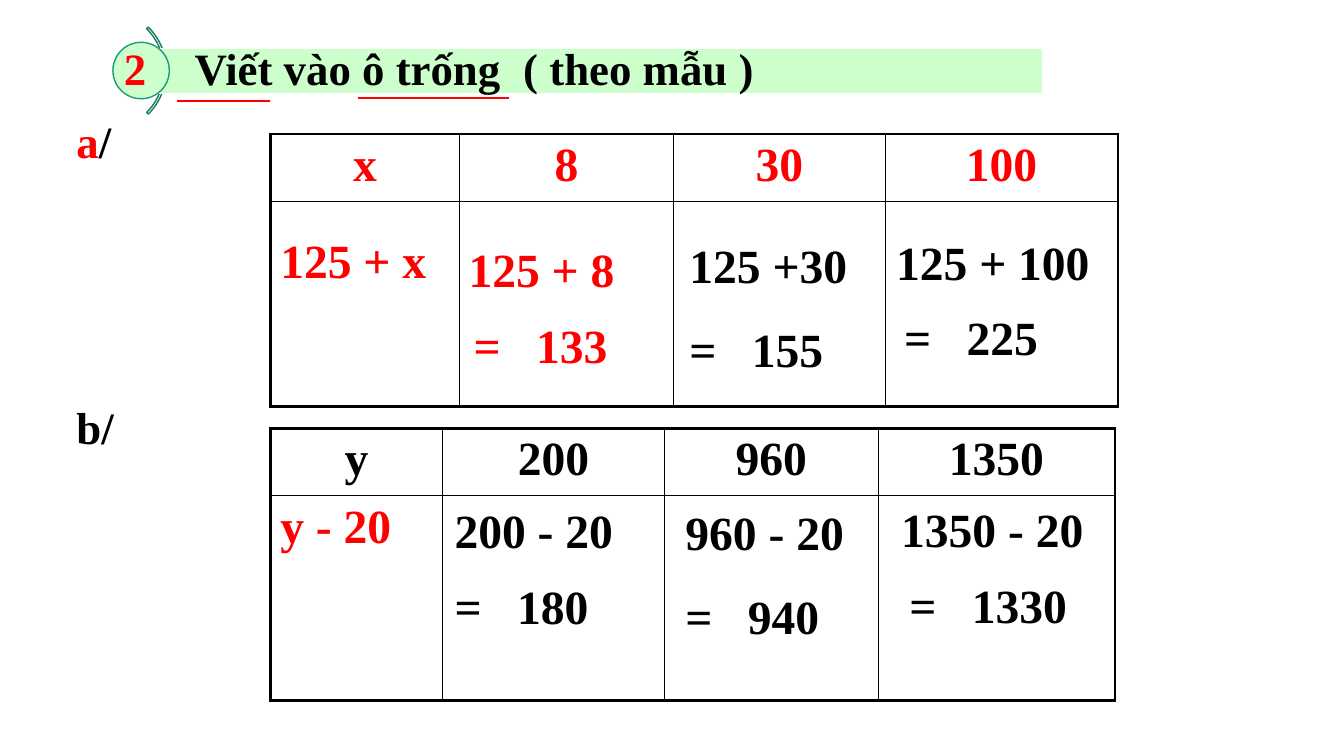
from lxml import etree
from pptx import Presentation
from pptx.dml.color import RGBColor
from pptx.enum.shapes import MSO_CONNECTOR, MSO_SHAPE
from pptx.enum.text import MSO_ANCHOR, PP_ALIGN
from pptx.oxml.ns import qn
from pptx.util import Inches, Pt

LEFT, CENTER = PP_ALIGN.LEFT, PP_ALIGN.CENTER
TOP, MIDDLE = MSO_ANCHOR.TOP, MSO_ANCHOR.MIDDLE
STRAIGHT = MSO_CONNECTOR.STRAIGHT
ARC, BAR, CIRCLE = MSO_SHAPE.BLOCK_ARC, MSO_SHAPE.RECTANGLE, MSO_SHAPE.OVAL

THEME = {
    "font": "Times New Roman",
    "black": "000000",
    "red": "FF0000",
    "white": "FFFFFF",
    "mint": "CCFFCC",
    "arc": "177B60",
    "ring": "1D9A78",
    "heading": 32,
    "number": 34,
    "thin": 1,
    "underline": 1.5,
    "thick": 2.25,
}

presentation = Presentation()
presentation.slide_width = Inches(13.33)
presentation.slide_height = Inches(7.5)
slide = presentation.slides.add_slide(presentation.slide_layouts[6])

# The grid has 133.3 columns and 75 rows
COLUMN = presentation.slide_width / 133.3
ROW = presentation.slide_height / 75


def place(left, top, width, height):
    return [int(left * COLUMN), int(top * ROW), int(width * COLUMN), int(height * ROW)]


def write(text_frame, parts, size, align=LEFT, tab=None):
    """Fill one paragraph with (text, colour) parts and an optional tab stop."""
    paragraph = text_frame.paragraphs[0]
    paragraph.alignment = align
    if tab:
        tab_list = etree.SubElement(paragraph._p.get_or_add_pPr(), qn("a:tabLst"))
        etree.SubElement(tab_list, qn("a:tab"), pos=str(int(tab * COLUMN)), algn="l")
    for text, colour in parts:
        run = paragraph.add_run()
        run.text = text
        run.font.name = THEME["font"]
        run.font.size = Pt(THEME[size])
        run.font.bold = True
        run.font.color.rgb = RGBColor.from_string(THEME[colour])


# Heading: arc behind the bar, then the bar and the circle
heading_shapes = {}
for kind, area, fill, line in [
    (ARC, (4.3, 0.9, 12.2, 12.2), None, "arc"),
    (BAR, (15.7, 4.8, 87.7, 4.5), "mint", "white"),
    (CIRCLE, (11.2, 4.2, 5.6, 5.6), "mint", "ring"),
]:
    shape = slide.shapes.add_shape(kind, *place(*area))
    shape.shadow.inherit = False
    if fill:
        shape.fill.solid()
        shape.fill.fore_color.rgb = RGBColor.from_string(THEME[fill])
    else:
        shape.fill.background()
    shape.line.color.rgb = RGBColor.from_string(THEME[line])
    shape.line.width = Pt(THEME["thin"])
    heading_shapes[kind] = shape

arc = heading_shapes[ARC]
for index, value in enumerate((189, 27, 0.019)):
    arc.adjustments[index] = value

title_frame = heading_shapes[BAR].text_frame
title_frame.margin_left = int(3.6 * COLUMN)
title_frame.vertical_anchor = MIDDLE
title_frame.word_wrap = True
write(title_frame, [("Viết vào ô trống\t( theo mẫu )", "black")], "heading", tab=32.6)
title_frame.paragraphs[0].line_spacing = 0.9

# Red underlines below the heading
for start, end, height in [(17.6, 26.8, 10), (35.5, 50.5, 9.7)]:
    underline = slide.shapes.add_connector(
        STRAIGHT, int(start * COLUMN), int(height * ROW), int(end * COLUMN), int(height * ROW))
    underline.line.color.rgb = RGBColor.from_string(THEME["red"])
    underline.line.width = Pt(THEME["underline"])
    etree.SubElement(underline._element.spPr, qn("a:effectLst"))

# Exercise number and part labels
for area, parts in [
    ((11.3, 3.6, 4.2, 6.4), [("2", "red")]),
    ((6.6, 10.8, 6.6, 6.4), [("a", "red"), ("/", "black")]),
    ((6.6, 39.2, 6.8, 6.4), [("b/", "black")]),
]:
    label = slide.shapes.add_textbox(*place(*area))
    label.text_frame.word_wrap = False
    write(label.text_frame, parts, "heading")

# Tables: header row, then the expression and room for the answers
ROW_HEIGHTS = (6.7, 20.3)
TABLES = [
    {"top": 13.3, "columns": (18.8, 21.2, 21, 23.1), "header": ("x", "8", "30", "100"),
     "header_colour": "red", "expression": "125 + x", "expression_margin": 3.4},
    {"top": 42.5, "columns": (17.1, 22, 21.2, 23.5), "header": ("y", "200", "960", "1350"),
     "header_colour": "black", "expression": "y - 20", "expression_margin": 0.5},
]
for content in TABLES:
    columns = content["columns"]
    area = place(26.8, content["top"], sum(columns), sum(ROW_HEIGHTS))
    table = slide.shapes.add_table(len(ROW_HEIGHTS), len(columns), *area).table
    table.first_row = table.horz_banding = False
    for index, width in enumerate(columns):
        table.columns[index].width = int(width * COLUMN)
    for index, height in enumerate(ROW_HEIGHTS):
        table.rows[index].height = int(height * ROW)

    for index, text in enumerate(content["header"]):
        write(table.cell(0, index).text_frame, [(text, content["header_colour"])], "number", CENTER)
    expression_cell = table.cell(1, 0)
    expression_cell.margin_top = int(content["expression_margin"] * ROW)
    write(expression_cell.text_frame, [(content["expression"], "red")], "number")

    # Thick outer frame, thin inner lines
    last_row, last_column = len(ROW_HEIGHTS) - 1, len(columns) - 1
    for position, cell in enumerate(table.iter_cells()):
        row, column = divmod(position, len(columns))
        cell.vertical_anchor = TOP
        cell.fill.background()
        outer_sides = {"a:lnL": column == 0, "a:lnR": column == last_column,
                       "a:lnT": row == 0, "a:lnB": row == last_row}
        properties = cell._tc.get_or_add_tcPr()
        for index, (side, outer) in enumerate(outer_sides.items()):
            width = Pt(THEME["thick" if outer else "thin"])
            border = etree.Element(qn(side), w=str(int(width)))
            border_fill = etree.SubElement(border, qn("a:solidFill"))
            etree.SubElement(border_fill, qn("a:srgbClr"), val=THEME["black"])
            properties.insert(index, border)

# Answers: sum or difference above, result below
ANSWERS = [
    ("125 + 8", (45.5, 23.3), "133", (46, 30.9), "red"),
    ("125 +30", (67.4, 22.9), "155", (67.4, 31.2), "black"),
    ("125 + 100", (87.9, 22.6), "225", (88.7, 30.1), "black"),
    ("200 - 20", (44.1, 49.2), "180", (44.1, 56.7), "black"),
    ("960 - 20", (67, 49.4), "940", (67, 57.7), "black"),
    ("1350 - 20", (88.4, 49.1), "1330", (89.2, 56.6), "black"),
]
for calculation, calculation_corner, result, result_corner, colour in ANSWERS:
    for text, corner in [(calculation, calculation_corner), (f"=\t{result}", result_corner)]:
        answer = slide.shapes.add_textbox(*place(*corner, 24, 6.7))
        answer.text_frame.word_wrap = True
        write(answer.text_frame, [(text, colour)], "number", tab=6.2)

presentation.save("out.pptx")
